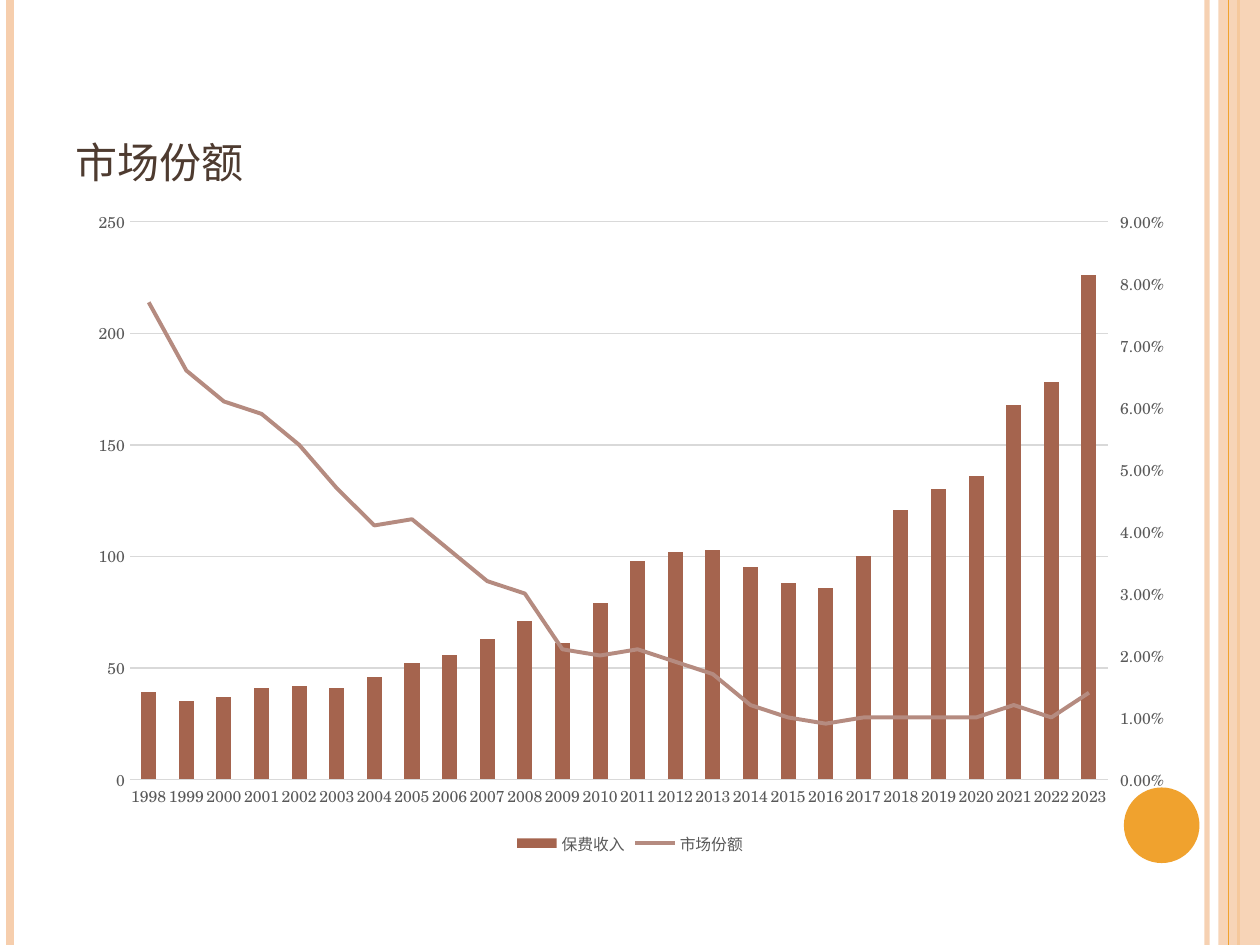
from copy import deepcopy

from lxml import etree
from pptx import Presentation
from pptx import util as u
from pptx.chart.data import CategoryChartData
from pptx.dml.color import RGBColor
from pptx.enum import chart as ch
from pptx.enum import shapes, text
from pptx.oxml import parse_xml
from pptx.oxml.ns import nsdecls, qn

FONT = "TeX Gyre Schola"
PEACH, ORANGE, GREY, GRID = "F6CEAD", "F0A22E", "595959", "D9D9D9"
YEARS = [str(year) for year in range(1998, 2024)]
PREMIUMS = [39, 35, 37, 41, 42, 41, 46, 52, 56, 63, 71, 61, 79, 98, 102, 103,
            95, 88, 86, 100, 121, 130, 136, 168, 178, 226]
SHARES = [0.077, 0.066, 0.061, 0.059, 0.054, 0.047, 0.041, 0.042, 0.037,
          0.032, 0.03, 0.021, 0.02, 0.021, 0.019, 0.017, 0.012, 0.01, 0.009,
          0.01, 0.01, 0.01, 0.01, 0.012, 0.01, 0.014]


def rgb(value):
    return RGBColor.from_string(value)


def set_alpha(fill_parent, percent):
    color = next(fill_parent.iter(qn("a:srgbClr")))
    etree.SubElement(color, qn("a:alpha")).set("val", str(percent * 1000))


def set_font(font, size, color):
    font.name, font.size = FONT, u.Pt(size)
    font.color.rgb = rgb(color)


def add_stripe(slide, x, height, color, width, alpha=None):
    x = u.Inches(x)
    line = slide.shapes.add_connector(shapes.MSO_CONNECTOR.STRAIGHT,
                                      x, 0, x, u.Inches(height))
    line.line.color.rgb, line.line.width = rgb(color), u.Pt(width)
    if alpha:
        set_alpha(line.line._ln, alpha)
    etree.SubElement(line._element.spPr, qn("a:effectLst"))


def add_block(slide, kind, box, color, alpha=None):
    sp = slide.shapes.add_shape(kind, *map(u.Inches, box))
    sp.shadow.inherit = False
    sp.fill.solid()
    sp.fill.fore_color.rgb = rgb(color)
    sp.line.fill.background()
    if alpha:
        set_alpha(sp._element.spPr, alpha)


def add_frame(slide, box):
    """Vertical stripes on both edges and the dot at lower right."""
    left, top, width, height = box
    right = left + width
    add_stripe(slide, right - 0.42, height, PEACH, 3, 93)
    add_stripe(slide, left + 0.08, height, PEACH, 4.5)
    add_stripe(slide, right - 0.17, height, ORANGE, 1.5)
    add_block(slide, shapes.MSO_SHAPE.RECTANGLE,
              (right - 0.33, top, 0.33, height), PEACH, 87)
    add_stripe(slide, right - 0.25, height, ORANGE, 0.75)
    add_block(slide, shapes.MSO_SHAPE.OVAL,
              (right - 1.08, top + height - 1.25, 0.6, 0.6), ORANGE)


def set_title(slide, box, wording):
    title = slide.shapes.title
    title.left, title.top, title.width, title.height = map(u.Inches, box)
    tf = title.text_frame
    tf.text = wording
    tf.vertical_anchor = text.MSO_ANCHOR.BOTTOM
    p = tf.paragraphs[0]
    p.alignment = text.PP_ALIGN.LEFT
    r = p.runs[0]
    set_font(r.font, 30, "4E3B30")
    r.font._element.set("cap", "small")


def style_axis(axis, line=None):
    axis.major_tick_mark = axis.minor_tick_mark = ch.XL_TICK_MARK.NONE
    set_font(axis.tick_labels.font, 9, GREY)
    if line:
        axis.format.line.color.rgb, axis.format.line.width = rgb(line), u.Pt(0.75)
    else:
        axis.format.line.fill.background()


def move_to_right_axis(chart):
    """Turn the last column series into a line on a percentage axis."""
    plot_area = chart._chartSpace.chart.plotArea
    bars = plot_area.find(qn("c:barChart"))
    ser = bars.findall(qn("c:ser"))[-1]
    for flag in ser.findall(qn("c:invertIfNegative")):
        ser.remove(flag)
    lines = parse_xml(
        f'<c:lineChart {nsdecls("c")}><c:grouping val="standard"/>'
        '<c:varyColors val="0"/><c:marker val="1"/>'
        '<c:axId val="501"/><c:axId val="502"/></c:lineChart>')
    lines.insert(2, ser)
    bars.addnext(lines)
    value_axis = plot_area.find(qn("c:valAx"))
    hidden_axis = parse_xml(
        f'<c:catAx {nsdecls("c")}><c:axId val="501"/>'
        '<c:scaling><c:orientation val="minMax"/></c:scaling>'
        '<c:delete val="1"/><c:axPos val="b"/>'
        '<c:crossAx val="502"/><c:crosses val="autoZero"/></c:catAx>')
    right_axis = parse_xml(
        f'<c:valAx {nsdecls("c")}><c:axId val="502"/>'
        '<c:scaling><c:orientation val="minMax"/>'
        '<c:max val="0.09"/><c:min val="0"/></c:scaling>'
        '<c:delete val="0"/><c:axPos val="r"/>'
        '<c:numFmt formatCode="0.00%" sourceLinked="0"/>'
        '<c:majorTickMark val="out"/><c:minorTickMark val="none"/>'
        '<c:tickLblPos val="nextTo"/><c:crossAx val="501"/>'
        '<c:crosses val="max"/><c:majorUnit val="0.01"/></c:valAx>')
    labels = right_axis.find(qn("c:tickLblPos"))
    for tag in ("c:txPr", "c:spPr"):
        labels.addnext(deepcopy(value_axis.find(qn(tag))))
    value_axis.addnext(hidden_axis)
    hidden_axis.addnext(right_axis)


def set_plot_box(chart, **fractions):
    plot_area = chart._chartSpace.chart.plotArea
    for old in plot_area.findall(qn("c:layout")):
        plot_area.remove(old)
    sizes = "".join(f'<c:{k} val="{v}"/>' for k, v in fractions.items())
    plot_area.insert(0, parse_xml(
        f'<c:layout {nsdecls("c")}><c:manualLayout>'
        '<c:layoutTarget val="inner"/><c:xMode val="edge"/>'
        f'<c:yMode val="edge"/>{sizes}</c:manualLayout></c:layout>'))


def add_share_chart(slide, box):
    data = CategoryChartData()
    data.categories = YEARS
    data.add_series("保费收入", PREMIUMS, "General")
    data.add_series("市场份额", SHARES, "0.00%")
    chart = slide.shapes.add_chart(ch.XL_CHART_TYPE.COLUMN_CLUSTERED,
                                   *map(u.Inches, box), data).chart
    set_font(chart.font, 10, "000000")
    chart.has_title = False

    # Legend
    chart.has_legend = True
    chart.legend.position = ch.XL_LEGEND_POSITION.BOTTOM
    chart.legend.include_in_layout = False
    set_font(chart.legend.font, 9, GREY)

    # Left and bottom axes
    style_axis(chart.category_axis, GRID)
    values = chart.value_axis
    style_axis(values)
    values.minimum_scale, values.maximum_scale, values.major_unit = 0, 250, 50
    values.tick_labels.number_format = "General"
    values.tick_labels.number_format_is_linked = False
    grid = values.major_gridlines.format.line
    grid.color.rgb, grid.width = rgb(GRID), u.Pt(0.75)

    # Columns, then the line on the right axis
    columns = chart.plots[0]
    columns.gap_width, columns.vary_by_categories = 150, False
    fill = columns.series[0].format.fill
    fill.solid()
    fill.fore_color.rgb = rgb("A5644E")
    move_to_right_axis(chart)
    share = chart.plots[1].series[0]
    share.smooth = False
    share.marker.style = ch.XL_MARKER_STYLE.NONE
    share.format.line.color.rgb = rgb("B58B80")
    share.format.line.width = u.Pt(2.25)
    set_plot_box(chart, x=0.05, y=0.04, w=0.88, h=0.84)


def main():
    prs = Presentation()
    prs.slide_width, prs.slide_height = u.Inches(10), u.Inches(7.5)
    slide = prs.slides.add_slide(prs.slide_layouts[5])
    add_frame(slide, (0, 0, 10, 7.5))
    set_title(slide, (0.5, 0.3, 8.17, 1.25), "市场份额")
    add_share_chart(slide, (0.59, 1.55, 8.82, 5.27))
    prs.save("out.pptx")


if __name__ == "__main__":
    main()
